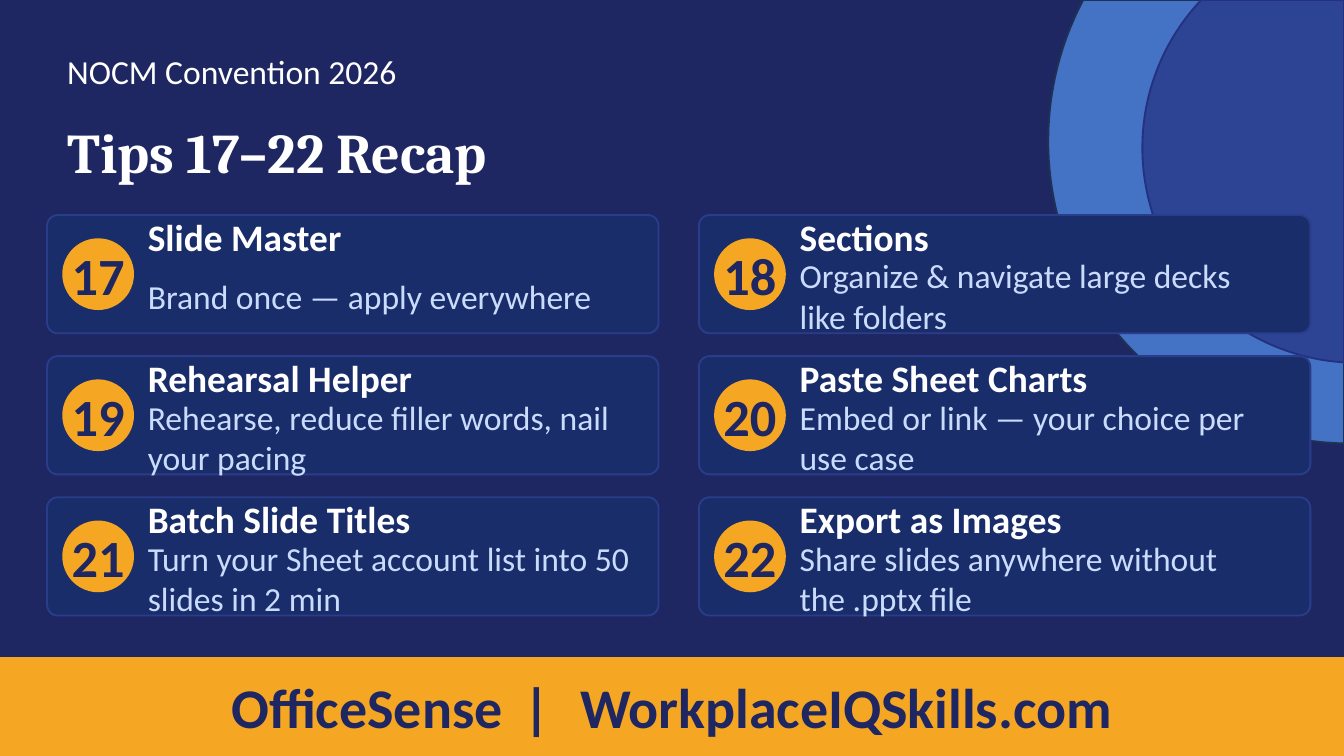
from math import acos, asin, cos, pi, sin

from lxml.etree import SubElement
from pptx import Presentation
from pptx.dml.color import RGBColor
from pptx.enum.shapes import MSO_SHAPE
from pptx.enum.text import MSO_ANCHOR, MSO_AUTO_SIZE, PP_ALIGN
from pptx.oxml.ns import qn
from pptx.util import Pt

THEME = {
    "navy": "1E2761",
    "amber": "F5A623",
    "card": "1A2D6B",
    "card_line": "2A3D8B",
    "ring": "4472C4",
    "ring_line": "1E3256",
    "disc": "243080",
    "event": {"name": "Calibri", "size": 18, "color": "FFFFFF", "bold": False},
    "title": {"name": "Cambria", "size": 30, "color": "FFFFFF", "bold": True},
    "number": {"name": "Calibri", "size": 28, "color": "1E2761", "bold": True},
    "heading": {"name": "Calibri", "size": 20, "color": "FFFFFF", "bold": True},
    "detail": {"name": "Calibri", "size": 18, "color": "CADCFC", "bold": False},
    "banner": {"name": "Calibri", "size": 30, "color": "1E2761", "bold": True},
}
TIPS = [
    ("Slide Master", "Brand once — apply everywhere"),
    ("Sections", "Organize & navigate large decks like folders"),
    ("Rehearsal Helper", "Rehearse, reduce filler words, nail your pacing"),
    ("Paste Sheet Charts", "Embed or link — your choice per use case"),
    ("Batch Slide Titles", "Turn your Sheet account list into 50 slides in 2 min"),
    ("Export as Images", "Share slides anywhere without the .pptx file"),
]
FIRST_TIP = 17
WIDTH, HEIGHT = 720, 405


def paint(shape, fill, line):
    shape.shadow.inherit = False
    shape.fill.solid()
    shape.fill.fore_color.rgb = RGBColor.from_string(THEME[fill])
    shape.line.color.rgb = RGBColor.from_string(THEME[line])
    shape.line.width = Pt(1)


def write(shape, texts, style, align=PP_ALIGN.LEFT, wrap=True):
    frame = shape.text_frame
    settings = {
        "margin_left": 0, "margin_top": 0, "margin_right": 0, "margin_bottom": 0,
        "vertical_anchor": MSO_ANCHOR.MIDDLE,
        "auto_size": MSO_AUTO_SIZE.NONE,
        "word_wrap": wrap,
    }
    for name, value in settings.items():
        setattr(frame, name, value)
    para = frame.paragraphs[0]
    para.alignment = align
    look = THEME[style]
    for text in texts:
        span = para.add_run()
        span.text = text
        formats = {"name": look["name"], "size": Pt(look["size"]), "bold": look["bold"]}
        for name, value in formats.items():
            setattr(span.font, name, value)
        span.font.color.rgb = RGBColor.from_string(look["color"])
    return para


deck = Presentation()
deck.slide_width, deck.slide_height = Pt(WIDTH), Pt(HEIGHT)
page = deck.slides.add_slide(deck.slide_layouts[5])
page.background.fill.solid()
page.background.fill.fore_color.rgb = RGBColor.from_string(THEME["navy"])

corner = page.shapes.add_group_shape()
circles = [
    (723.6, 75.6, 162, "ring", "ring_line"),
    (727.2, 79.2, 115.2, "disc", "disc"),
]
STEPS = 60
for center_x, center_y, radius, fill, line in circles:
    start = pi + asin(center_y / radius)
    end = acos((WIDTH - center_x) / radius)
    angles = [start + (end - start) * step / STEPS for step in range(STEPS + 1)]
    arc = [
        (Pt(center_x + radius * cos(angle)), Pt(center_y + radius * sin(angle)))
        for angle in angles
    ]
    outline = corner.shapes.build_freeform(Pt(WIDTH), 0)
    outline.add_line_segments(arc, close=True)
    circle = outline.convert_to_shape()
    paint(circle, fill, line)
color = circle.fill._xPr.find(qn("a:solidFill"))[0]
SubElement(color, qn("a:alpha")).set("val", "70000")

event = page.shapes.add_textbox(Pt(36), Pt(25.2), Pt(208), Pt(25.2))
write(event, ["NOCM Convention 2026"], "event")

title = page.shapes.title
title.left, title.top, title.width, title.height = Pt(36), Pt(57.6), Pt(612), Pt(46.8)
write(title, ["Tips 17–22 Recap"], "title")

for index, (heading, detail) in enumerate(TIPS):
    row, column = divmod(index, 2)
    left, top = 25.2 + 349.2 * column, 115.2 + 75.6 * row
    card = page.shapes.add_shape(
        MSO_SHAPE.ROUNDED_RECTANGLE, Pt(left), Pt(top), Pt(327.6), Pt(63.36)
    )
    card.adjustments[0] = 0.09
    paint(card, "card", "card_line")
    badge = page.shapes.add_shape(
        MSO_SHAPE.OVAL, Pt(left + 8.64), Pt(top + 12.96), Pt(37.44), Pt(37.44)
    )
    paint(badge, "amber", "amber")
    write(badge, [str(FIRST_TIP + index)], "number", PP_ALIGN.CENTER, wrap=False)
    for text, style, offset, height in [
        (heading, "heading", 0, 23.04),
        (detail, "detail", 30.96, 24.48),
    ]:
        box = page.shapes.add_textbox(
            Pt(left + 54), Pt(top + offset), Pt(259.2), Pt(height)
        )
        write(box, [text], style)

banner = page.shapes.add_shape(MSO_SHAPE.RECTANGLE, 0, Pt(352.4), Pt(WIDTH), Pt(52))
paint(banner, "amber", "amber")
para = write(
    banner, ["OfficeSense", " | ", "WorkplaceIQSkills.com"], "banner", PP_ALIGN.CENTER
)
para.runs[1]._r.get_or_add_rPr().set("spc", "450")

deck.save("out.pptx")
